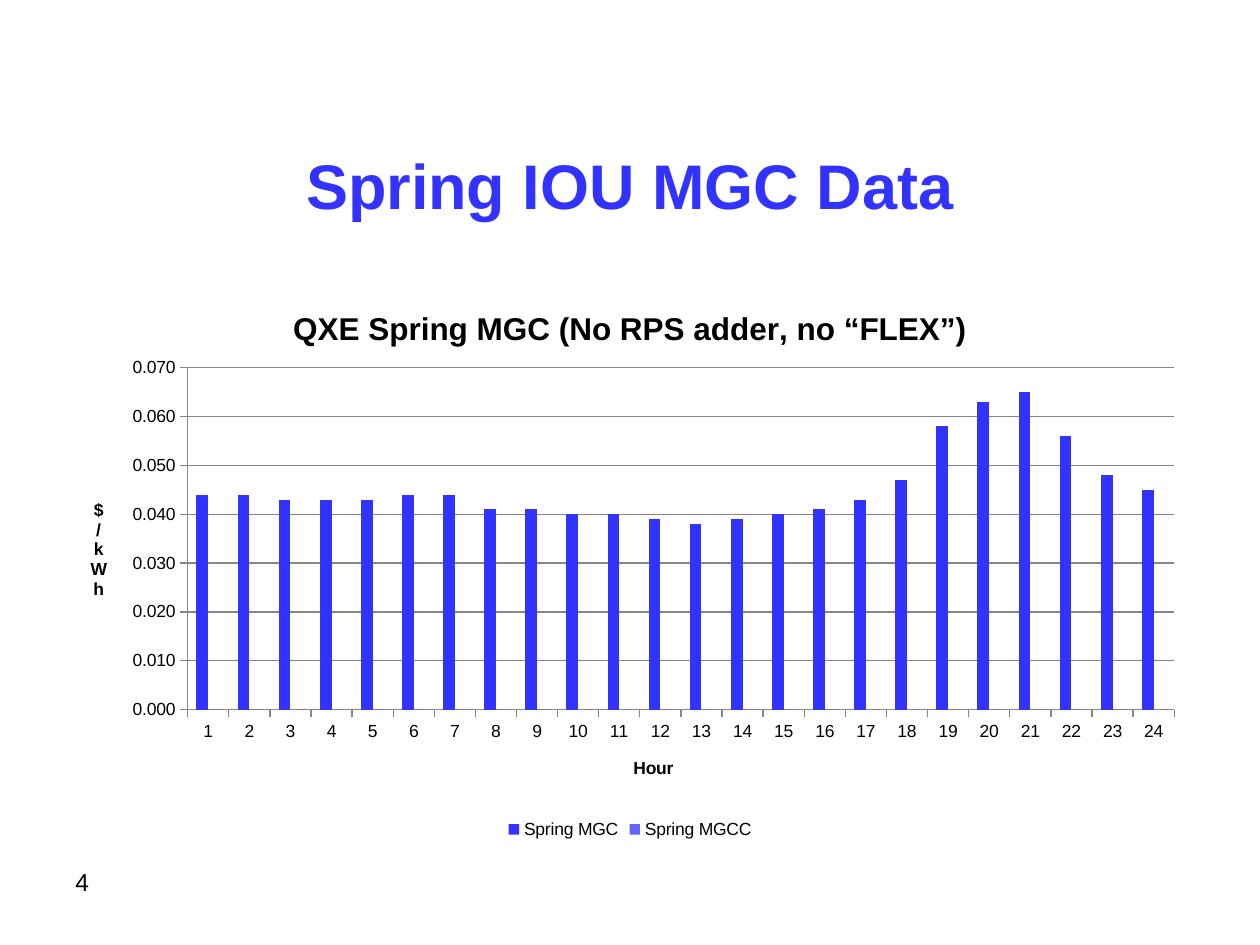
"""Build a slide with a column chart of hourly spring generation costs."""
from lxml import etree
from pptx import Presentation
from pptx import util as u
from pptx.chart.data import CategoryChartData
from pptx.dml.color import RGBColor
from pptx.enum import chart as ch, text
from pptx.oxml import parse_xml

FONT, BLACK, BLUE, GRAY = "Arial", "000000", "3333FF", "868686"
TITLE = "Spring IOU MGC Data"
CHART_TITLE = "QXE Spring MGC (No RPS adder, no “FLEX”)"
PAGE = "4"
HOURS = [str(h) for h in range(1, 25)]
SERIES = [
    ("Spring MGC", BLUE, [
        0.044, 0.044, 0.043, 0.043, 0.043, 0.044, 0.044, 0.041,
        0.041, 0.040, 0.040, 0.039, 0.038, 0.039, 0.040, 0.041,
        0.043, 0.047, 0.058, 0.063, 0.065, 0.056, 0.048, 0.045]),
    ("Spring MGCC", "6565FF", [0] * len(HOURS)),
]
PLOT = {"x": 0.11, "y": 0.15, "w": 0.87, "h": 0.61}
CHART_NS = "http://schemas.openxmlformats.org/drawingml/2006/chart"


def rgb(color):
    return RGBColor.from_string(color)


def set_font(font, size, color=BLACK, bold=False):
    font.name, font.size, font.bold = FONT, u.Pt(size), bold
    font.color.rgb = rgb(color)


def write(tf, content, size, align=None, **style):
    p = tf.paragraphs[0]
    p.alignment = align
    r = p.add_run()
    r.text = content
    set_font(r.font, size, **style)


def place(sp, left, top, width, height):
    sp.left, sp.top, sp.width, sp.height = map(u.Cm, (left, top, width, height))


def format_axis(axis, title):
    write(axis.axis_title.text_frame, title, 10, bold=True)
    axis.major_tick_mark = ch.XL_TICK_MARK.OUTSIDE
    axis.minor_tick_mark = ch.XL_TICK_MARK.NONE
    set_font(axis.tick_labels.font, 10)
    axis.format.line.color.rgb = rgb(GRAY)


def set_plot_layout(plot_area):
    modes = '<c:layoutTarget val="inner"/><c:xMode val="edge"/><c:yMode val="edge"/>'
    sizes = "".join(f'<c:{k} val="{v}"/>' for k, v in PLOT.items())
    for old in plot_area.findall(etree.QName(CHART_NS, "layout").text):
        plot_area.remove(old)
    plot_area.insert(0, parse_xml(
        f'<c:layout xmlns:c="{CHART_NS}"><c:manualLayout>{modes}{sizes}'
        '</c:manualLayout></c:layout>'))


def add_cost_chart(s):
    data = CategoryChartData(number_format="0.000")
    data.categories = HOURS
    for name, _, values in SERIES:
        data.add_series(name, values)
    box = map(u.Cm, (1.27, 5.72, 22.86, 11.3))
    chart = s.shapes.add_chart(
        ch.XL_CHART_TYPE.COLUMN_CLUSTERED, *box, data).chart
    set_font(chart.font, 10)
    chart.has_title = True
    write(chart.chart_title.text_frame, CHART_TITLE, 18, bold=True)
    chart.has_legend = True
    chart.legend.position = ch.XL_LEGEND_POSITION.BOTTOM
    chart.legend.include_in_layout = False
    set_font(chart.legend.font, 10)

    plot = chart.plots[0]
    plot.gap_width, plot.overlap, plot.vary_by_categories = 150, 0, False
    for series, (_, color, _) in zip(plot.series, SERIES):
        series.format.fill.solid()
        series.format.fill.fore_color.rgb = rgb(color)

    format_axis(chart.category_axis, "Hour")
    axis = chart.value_axis
    format_axis(axis, "$/kWh")
    body = axis.axis_title.text_frame._txBody.bodyPr
    body.set("rot", "0")
    body.set("vert", "wordArtVert")
    axis.minimum_scale, axis.maximum_scale, axis.major_unit = 0, 0.07, 0.01
    axis.tick_labels.number_format = "0.000"
    axis.tick_labels.number_format_is_linked = False
    axis.has_major_gridlines = True
    axis.major_gridlines.format.line.color.rgb = rgb(GRAY)
    set_plot_layout(chart._chartSpace.chart.plotArea)


def main():
    prs = Presentation()
    prs.slide_width, prs.slide_height = u.Cm(25.4), u.Cm(19.05)
    s = prs.slides.add_slide(prs.slide_layouts[5])
    title = s.shapes.title
    place(title, 1.27, 2.34, 22.86, 2.74)
    title.text_frame.vertical_anchor = text.MSO_ANCHOR.MIDDLE
    write(title.text_frame, TITLE, 36, text.PP_ALIGN.CENTER, color=BLUE, bold=True)
    add_cost_chart(s)
    page = s.shapes.add_textbox(*map(u.Cm, (1.27, 17.35, 4.65, 1.32)))
    page.text_frame.word_wrap = True
    write(page.text_frame, PAGE, 14)
    prs.save("out.pptx")


if __name__ == "__main__":
    main()
